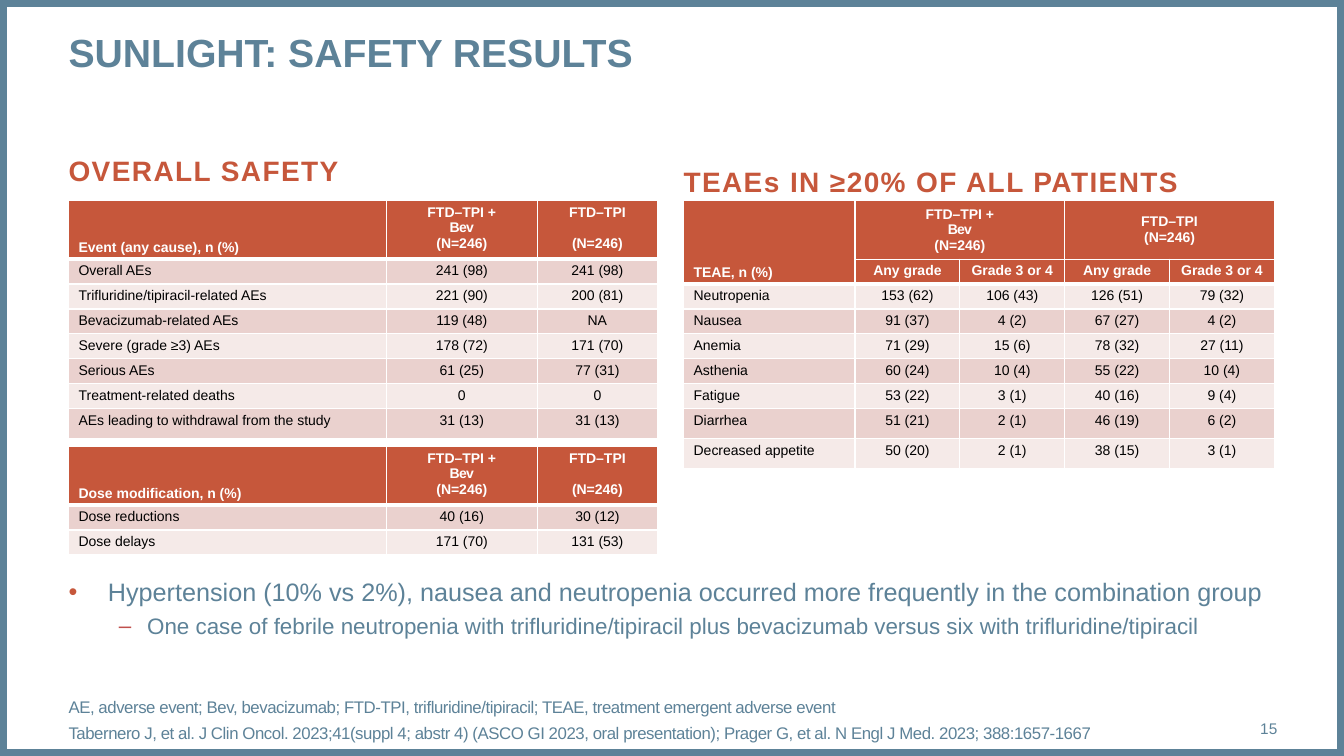
import pptx
import pptx.util
import pptx.dml.color
import pptx.enum.shapes
import pptx.enum.text
import pptx.oxml
import pptx.oxml.ns
import lxml.etree

Inches, Pt = pptx.util.Inches, pptx.util.Pt
RGBColor = pptx.dml.color.RGBColor
Align = pptx.enum.text.PP_ALIGN
Anchor = pptx.enum.text.MSO_ANCHOR
qn = pptx.oxml.ns.qn

SLATE = RGBColor(0x5D, 0x82, 0x98)
RUST = RGBColor(0xC6, 0x57, 0x3B)
DASH_RED = RGBColor(0xC0, 0x50, 0x4D)
BAND_DARK = RGBColor(0xEA, 0xD1, 0xCE)
BAND_LIGHT = RGBColor(0xF5, 0xEA, 0xE8)
WHITE = RGBColor(0xFF, 0xFF, 0xFF)
BLACK = RGBColor(0, 0, 0)


def style_text(para, size, color, bold=False, spacing=0):
    for run in para.runs:
        run.font.name = "Arial"
        run.font.size = Pt(size)
        run.font.bold = bold
        run.font.color.rgb = color
        if spacing:
            run.font._element.set("spc", str(int(spacing * 100)))


def add_text(left, top, width, height, text, size, color, bold=False, spacing=0, anchor=Anchor.TOP):
    box = slide.shapes.add_textbox(Inches(left), Inches(top), Inches(width), Inches(height))
    frame = box.text_frame
    frame.word_wrap = True
    frame.vertical_anchor = anchor
    frame.margin_left = frame.margin_right = frame.margin_top = frame.margin_bottom = 0
    frame.text = text
    for para in frame.paragraphs:
        style_text(para, size, color, bold, spacing)
    return frame


deck = pptx.Presentation()
deck.slide_width, deck.slide_height = Inches(13.33), Inches(7.5)
slide = deck.slides.add_slide(deck.slide_layouts[5])

# Slide border
border = slide.shapes.add_shape(pptx.enum.shapes.MSO_SHAPE.RECTANGLE, 0, 0, deck.slide_width, deck.slide_height)
border.shadow.inherit = False
border.fill.background()
border.line.color.rgb = SLATE
border.line.width = Pt(10)

# Title
title = slide.shapes.title
title.left, title.top, title.width, title.height = Inches(0.68), Inches(0.28), Inches(11.99), Inches(0.94)
frame = title.text_frame
frame.text = "SUNLIGHT: SAFETY RESULTS"
frame.auto_size = pptx.enum.text.MSO_AUTO_SIZE.NONE
frame.vertical_anchor = Anchor.TOP
frame.margin_left = frame.margin_right = frame.margin_top = frame.margin_bottom = 0
frame.paragraphs[0].alignment = Align.LEFT
style_text(frame.paragraphs[0], 28, SLATE, bold=True)

# Table headings
for left, top, width, text in [
    (0.68, 1.47, 2.82, "OVERALL SAFETY"),
    (6.78, 1.58, 5.06, "TEAEs IN ≥20% OF ALL PATIENTS"),
]:
    heading = add_text(left, top, width, 0.44, text, 20, RUST, bold=True, spacing=1)
    heading.word_wrap = False
    heading.margin_top = heading.margin_bottom = Inches(0.05)

# Tables: left, top, column widths, row heights, header rows, cells
COMBINATION = "FTD–TPI +\nBev\n(N=246)"
SINGLE = "FTD–TPI\n(N=246)"
safety_rows = [
    ["Event (any cause), n (%)", COMBINATION, SINGLE],
    ["Overall AEs", "241 (98)", "241 (98)"],
    ["Trifluridine/tipiracil-related AEs", "221 (90)", "200 (81)"],
    ["Bevacizumab-related AEs", "119 (48)", "NA"],
    ["Severe (grade ≥3) AEs", "178 (72)", "171 (70)"],
    ["Serious AEs", "61 (25)", "77 (31)"],
    ["Treatment-related deaths", "0", "0"],
    ["AEs leading to withdrawal from the study", "31 (13)", "31 (13)"],
]
dose_rows = [
    ["Dose modification, n (%)", COMBINATION, SINGLE],
    ["Dose reductions", "40 (16)", "30 (12)"],
    ["Dose delays", "171 (70)", "131 (53)"],
]
teae_rows = [
    ["TEAE, n (%)", COMBINATION, "", SINGLE, ""],
    ["", "Any grade", "Grade 3 or 4", "Any grade", "Grade 3 or 4"],
    ["Neutropenia", "153 (62)", "106 (43)", "126 (51)", "79 (32)"],
    ["Nausea", "91 (37)", "4 (2)", "67 (27)", "4 (2)"],
    ["Anemia", "71 (29)", "15 (6)", "78 (32)", "27 (11)"],
    ["Asthenia", "60 (24)", "10 (4)", "55 (22)", "10 (4)"],
    ["Fatigue", "53 (22)", "3 (1)", "40 (16)", "9 (4)"],
    ["Diarrhea", "51 (21)", "2 (1)", "46 (19)", "6 (2)"],
    ["Decreased appetite", "50 (20)", "2 (1)", "38 (15)", "3 (1)"],
]
arm_widths = [3.15, 1.5, 1.19]
for left, top, widths, heights, header_rows, rows in [
    (0.68, 1.99, arm_widths, [0.57] + [0.24] * 6 + [0.3], 1, safety_rows),
    (0.68, 4.43, arm_widths, [0.57] + [0.24] * 2, 1, dose_rows),
    (6.78, 1.99, [1.7] + [1.04] * 4, [0.58] + [0.24] * 6 + [0.3] * 2, 2, teae_rows),
]:
    table = slide.shapes.add_table(len(rows), len(widths), Inches(left), Inches(top),
                                   Inches(sum(widths)), Inches(sum(heights))).table
    table.horz_banding = False
    for column, width in zip(table.columns, widths):
        column.width = Inches(width)
    for row, height in zip(table.rows, heights):
        row.height = Inches(height)
    if header_rows == 2:
        table.cell(0, 0).merge(table.cell(1, 0))
        table.cell(0, 1).merge(table.cell(0, 2))
        table.cell(0, 3).merge(table.cell(0, 4))

    for r, row in enumerate(rows):
        is_header = r < header_rows
        for c, text in enumerate(row):
            cell = table.cell(r, c)
            cell.margin_top = cell.margin_bottom = Inches(0.04)
            cell.text_frame.text = text
            for para in cell.text_frame.paragraphs:
                para.alignment = Align.CENTER if c else Align.LEFT
                style_text(para, 10, WHITE if is_header else BLACK, bold=is_header,
                           spacing=-0.5 if para.text == "Bev" else 0)
            if header_rows == 1 and text == SINGLE:
                cell.text_frame.paragraphs[1].space_before = Pt(11.5)
            if is_header and c == 0:
                cell.vertical_anchor = Anchor.BOTTOM
            elif r == 0 and header_rows == 2:
                cell.vertical_anchor = Anchor.MIDDLE
            else:
                cell.vertical_anchor = Anchor.TOP

            # White cell borders, thick under the header
            thick_bottom = r == header_rows - 1 or (is_header and c == 0)
            for side, thick in [("L", False), ("R", False), ("T", r == header_rows), ("B", thick_bottom)]:
                line = lxml.etree.SubElement(cell._tc.get_or_add_tcPr(), qn("a:ln" + side),
                                             w=str(Pt(3 if thick else 1)))
                fill = lxml.etree.SubElement(line, qn("a:solidFill"))
                lxml.etree.SubElement(fill, qn("a:srgbClr"), val=str(WHITE))
            cell.fill.solid()
            cell.fill.fore_color.rgb = RUST if is_header else BAND_DARK if r % 2 else BAND_LIGHT

# Key findings
findings = add_text(
    0.68, 5.72, 11.99, 0.72,
    "Hypertension (10% vs 2%), nausea and neutropenia occurred more frequently in the combination group\n"
    "One case of febrile neutropenia with trifluridine/tipiracil plus bevacizumab versus six with "
    "trifluridine/tipiracil", 18, SLATE)
for para, margin, indent, mark, mark_color in zip(
        findings.paragraphs, (0.39, 0.78), (-0.39, -0.28), "•–", (RUST, DASH_RED)):
    properties = para._p.get_or_add_pPr()
    properties.set("marL", str(Inches(margin)))
    properties.set("indent", str(Inches(indent)))
    bullet_color = lxml.etree.SubElement(properties, qn("a:buClr"))
    lxml.etree.SubElement(bullet_color, qn("a:srgbClr"), val=str(mark_color))
    lxml.etree.SubElement(properties, qn("a:buFont"), typeface="Arial")
    lxml.etree.SubElement(properties, qn("a:buChar"), char=mark)
sub_finding = findings.paragraphs[1]
sub_finding.level = 1
sub_finding.space_before = Pt(4)
style_text(sub_finding, 16, SLATE)

# Abbreviations, references and page number
notes = add_text(
    0.68, 6.94, 11.13, 0.4,
    "AE, adverse event; Bev, bevacizumab; FTD-TPI, trifluridine/tipiracil; TEAE, treatment emergent adverse event\n"
    "Tabernero J, et al. J Clin Oncol. 2023;41(suppl 4; abstr 4) (ASCO GI 2023, oral presentation); "
    "Prager G, et al. N Engl J Med. 2023; 388:1657-1667", 12, SLATE, spacing=-0.3, anchor=Anchor.MIDDLE)
notes.paragraphs[1].space_before = Pt(4)
page_number = add_text(11.81, 7.03, 0.86, 0.4, "15", 11, SLATE, anchor=Anchor.MIDDLE)
page_number.paragraphs[0].alignment = Align.RIGHT

deck.save("out.pptx")
